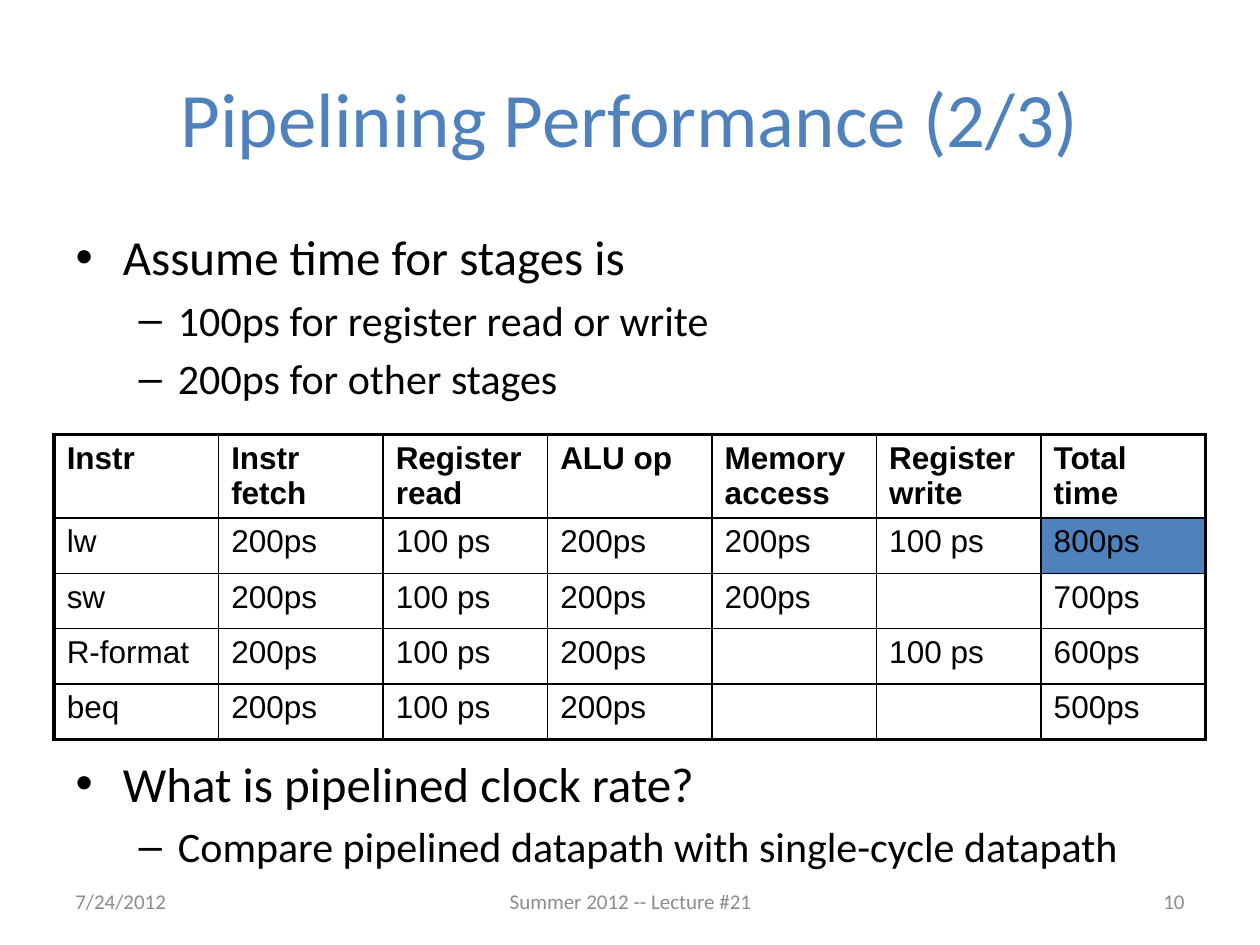
from dataclasses import dataclass

from lxml import etree
from pptx import Presentation, util as u
from pptx.dml.color import RGBColor
from pptx.enum import text
from pptx.oxml.ns import qn

TITLE = "Pipelining Performance (2/3)"
BULLETS = [  # level, text, gap above in points (None keeps the template's)
    (0, "Assume time for stages is", None),
    (1, "100ps for register read or write", None),
    (1, "200ps for other stages", None),
    (0, "What is pipelined clock rate?", 200),  # leaves room for the table
    (1, "Compare pipelined datapath with single-cycle datapath", None),
]
TIMINGS = [
    ("Instr", "Instr fetch", "Register read", "ALU op",
     "Memory access", "Register write", "Total time"),
    ("lw", "200ps", "100 ps", "200ps", "200ps", "100 ps", "800ps"),
    ("sw", "200ps", "100 ps", "200ps", "200ps", "", "700ps"),
    ("R-format", "200ps", "100 ps", "200ps", "", "100 ps", "600ps"),
    ("beq", "200ps", "100 ps", "200ps", "", "", "500ps"),
]
HIGHLIGHT = (1, 6)
ALIGN = text.PP_ALIGN
FOOTERS = [  # text, left, width, alignment
    ("7/24/2012", 0.5, 2.33, ALIGN.LEFT),
    ("Summer 2012 -- Lecture #21", 3.42, 3.17, ALIGN.CENTER),
    ("10", 7.17, 2.33, ALIGN.RIGHT),
]


@dataclass(frozen=True)
class Theme:
    accent: str = "4F81BD"
    ink: str = "000000"
    muted: str = "8C8C8C"
    font: str = "Calibri"
    table_font: str = "Arial"
    title: int = 44
    levels: tuple = (28, 24)
    table: int = 18
    footer: int = 12
    outer: float = 2.25
    under_header: float = 1.5
    inner: float = 1


T = Theme()
MARGIN, CONTENT_W = 0.5, 9
TABLE_X, TABLE_Y, TABLE_W = 0.43, 3.45, 9.14
HEADER_H, ROW_H = 0.66, 0.44


def place(shape, *box):
    shape.left, shape.top, shape.width, shape.height = map(u.Inches, box)


def write(p, words, size, color=T.ink, font=T.font, bold=False, align=None):
    r = p.add_run()
    r.text = words
    r.font.size, r.font.name, r.font.bold = u.Pt(size), font, bold
    r.font.color.rgb = RGBColor.from_string(color)
    if align is not None:
        p.alignment = align


def set_borders(cell, **widths):
    """Draw cell edges; keywords are L, R, T, B with widths in points."""
    tc_pr = cell._tc.get_or_add_tcPr()
    for i, (side, width) in enumerate(widths.items()):
        ln = etree.Element(qn(f"a:ln{side}"), w=str(int(u.Pt(width))))
        fill = etree.SubElement(ln, qn("a:solidFill"))
        etree.SubElement(fill, qn("a:srgbClr"), val=T.ink)
        tc_pr.insert(i, ln)


def add_bullets(body):
    tf = body.text_frame
    tf.auto_size = text.MSO_AUTO_SIZE.NONE
    for i, (level, words, gap) in enumerate(BULLETS):
        p = tf.add_paragraph() if i else tf.paragraphs[0]
        p.level = level
        if gap:
            p.space_before = u.Pt(gap)
        write(p, words, T.levels[level])


def add_timing_table(s):
    rows, cols = len(TIMINGS), len(TIMINGS[0])
    height = HEADER_H + ROW_H * (rows - 1)
    table = s.shapes.add_table(
        rows, cols, *map(u.Inches, (TABLE_X, TABLE_Y, TABLE_W, height))).table
    table.first_row = table.horz_banding = False
    for column in table.columns:
        column.width = u.Inches(TABLE_W / cols)
    # Weights of the rules from top to bottom and from left to right
    h_rules = [T.outer, T.under_header] + [T.inner] * (rows - 2) + [T.outer]
    v_rules = [T.outer] + [T.inner] * (cols - 1) + [T.outer]
    for i, values in enumerate(TIMINGS):
        table.rows[i].height = u.Inches(ROW_H if i else HEADER_H)
        for j, value in enumerate(values):
            cell = table.cell(i, j)
            if (i, j) == HIGHLIGHT:
                cell.fill.solid()
                cell.fill.fore_color.rgb = RGBColor.from_string(T.accent)
            else:
                cell.fill.background()
            set_borders(cell, L=v_rules[j], R=v_rules[j + 1],
                        T=h_rules[i], B=h_rules[i + 1])
            if value:
                write(cell.text_frame.paragraphs[0], value, T.table,
                      font=T.table_font, bold=i == 0)


def add_footers(s):
    for words, left, width, align in FOOTERS:
        box = s.shapes.add_textbox(*map(u.Inches, (left, 6.95, width, 0.4)))
        tf = box.text_frame
        tf.word_wrap = True
        tf.vertical_anchor = text.MSO_ANCHOR.MIDDLE
        write(tf.paragraphs[0], words, T.footer, T.muted, align=align)


def main():
    prs = Presentation()
    prs.slide_width, prs.slide_height = u.Inches(10), u.Inches(7.5)
    s = prs.slides.add_slide(prs.slide_layouts[1])
    title, body = s.placeholders
    place(title, MARGIN, 0.3, CONTENT_W, 1.25)
    write(title.text_frame.paragraphs[0], TITLE, T.title, T.accent,
          align=ALIGN.CENTER)
    place(body, MARGIN, 1.75, CONTENT_W, 5.4)
    add_bullets(body)
    add_timing_table(s)
    add_footers(s)
    prs.save("out.pptx")


if __name__ == "__main__":
    main()
